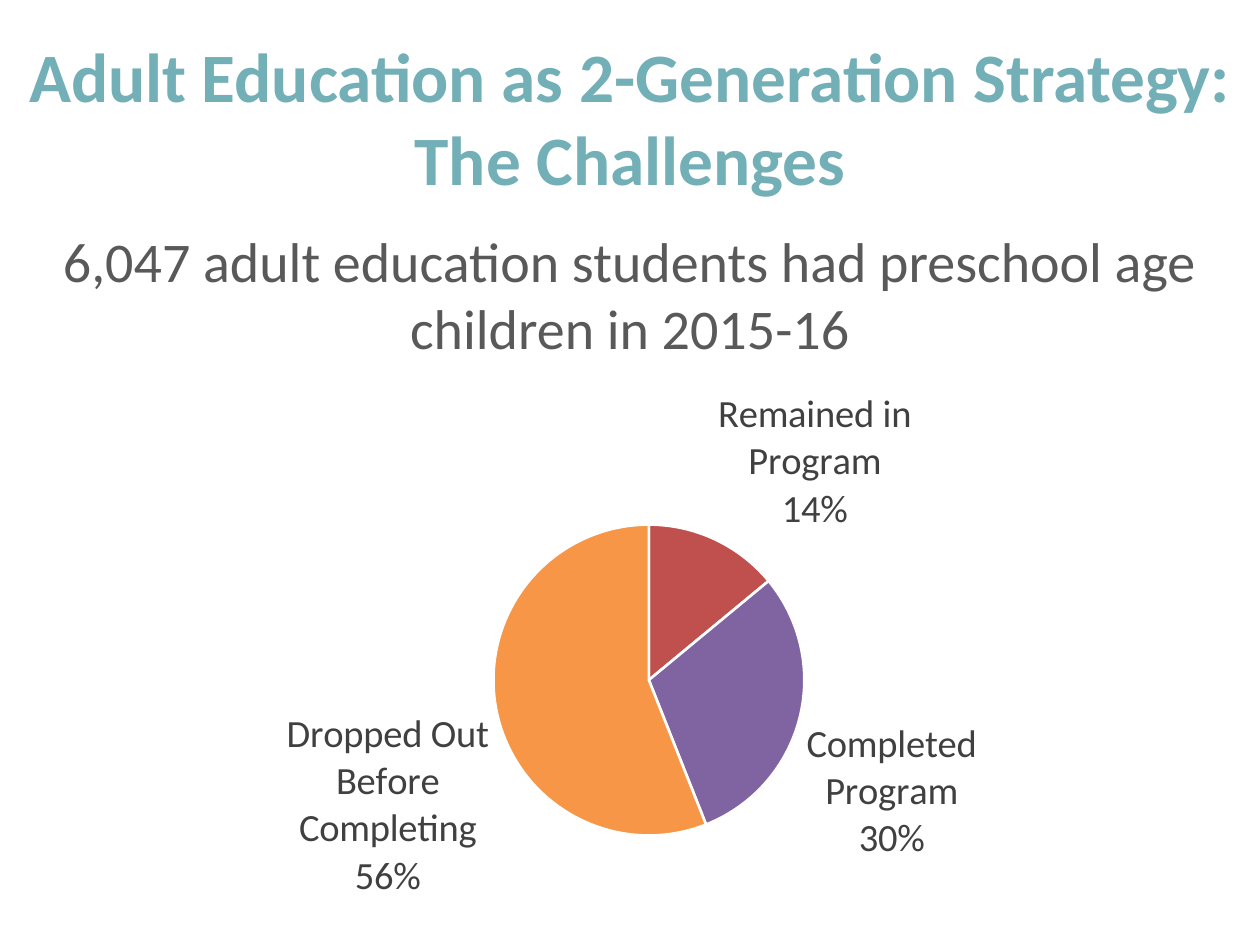
from lxml import etree
from pptx import Presentation
from pptx.chart.data import CategoryChartData
from pptx.dml.color import RGBColor
from pptx.enum.chart import XL_CHART_TYPE, XL_LABEL_POSITION
from pptx.enum.text import MSO_ANCHOR, PP_ALIGN
from pptx.oxml.ns import qn
from pptx.util import Inches, Pt

PIE = XL_CHART_TYPE.PIE
OUTSIDE_END = XL_LABEL_POSITION.OUTSIDE_END
MIDDLE, TOP = MSO_ANCHOR.MIDDLE, MSO_ANCHOR.TOP
CENTER = PP_ALIGN.CENTER

TEAL = RGBColor(0x73, 0xAF, 0xB6)
GRAY = RGBColor(0x59, 0x59, 0x59)
DARK = RGBColor(0x40, 0x40, 0x40)
WHITE = RGBColor(0xFF, 0xFF, 0xFF)
RED = RGBColor(0xC0, 0x50, 0x4D)
PURPLE = RGBColor(0x80, 0x64, 0xA2)
ORANGE = RGBColor(0xF7, 0x96, 0x46)

OUTCOMES = [
    ("Remained in Program", 14, RED),
    ("Completed Program", 30, PURPLE),
    ("Dropped Out Before Completing", 56, ORANGE),
]
PIE_LAYOUT = {"x": 0.39, "y": 0.27, "w": 0.25, "h": 0.54}


def format_font(font, size, color, bold=False):
    for name, value in {"name": "Calibri", "size": Pt(size), "bold": bold}.items():
        setattr(font, name, value)
    font.color.rgb = color


def write_text(sp, text, size, color, anchor, bold=False):
    tf = sp.text_frame
    tf.word_wrap = True
    tf.vertical_anchor = anchor
    p = tf.paragraphs[0]
    p.text = text
    p.alignment = CENTER
    for r in p.runs:
        format_font(r.font, size, color, bold)


def add_title(s, text):
    sp = s.shapes.title
    box = {"left": 0, "top": 0.3, "width": 10, "height": 1.25}
    for name, value in box.items():
        setattr(sp, name, Inches(value))
    write_text(sp, text, 39.6, TEAL, MIDDLE, True)


def add_subtitle(s, text):
    sp = s.shapes.add_textbox(Inches(0.25), Inches(1.75), Inches(9.5), Inches(1.18))
    write_text(sp, text, 32, GRAY, TOP)


def place_plot(chart):
    plot_area = chart.plots[0]._element.getparent()
    for old in plot_area.findall(qn("c:layout")):
        plot_area.remove(old)
    layout = etree.Element(qn("c:layout"))
    plot_area.insert(0, layout)
    manual = etree.SubElement(layout, qn("c:manualLayout"))
    settings = {"layoutTarget": "inner", "xMode": "edge", "yMode": "edge", **PIE_LAYOUT}
    for tag, value in settings.items():
        etree.SubElement(manual, qn(f"c:{tag}")).set("val", str(value))


def add_outcome_pie(s):
    data = CategoryChartData()
    data.categories = [name for name, _, _ in OUTCOMES]
    data.add_series("Series 1", [value for _, value, _ in OUTCOMES])
    frame = s.shapes.add_chart(
        PIE, Inches(0), Inches(2.93), Inches(10), Inches(4.57), data
    )
    chart = frame.chart
    chart.has_title = False
    chart.has_legend = False
    place_plot(chart)
    plot = chart.plots[0]
    plot.vary_by_categories = True
    for i, (_, _, color) in enumerate(OUTCOMES):
        fmt = plot.series[0].points[i].format
        fmt.fill.solid()
        fmt.fill.fore_color.rgb = color
        fmt.line.color.rgb = WHITE
        fmt.line.width = Pt(1.5)
    labels = plot.series[0].data_labels
    options = {
        "show_value": False,
        "show_category_name": True,
        "show_percentage": True,
        "number_format": "0%",
        "number_format_is_linked": False,
        "position": OUTSIDE_END,
    }
    for name, value in options.items():
        setattr(labels, name, value)
    format_font(labels.font, 22, DARK)


def main():
    prs = Presentation()
    prs.slide_width = Inches(10)
    prs.slide_height = Inches(7.5)
    s = prs.slides.add_slide(prs.slide_layouts[5])
    add_title(s, "Adult Education as 2-Generation Strategy:\nThe Challenges")
    add_subtitle(
        s, "6,047 adult education students had preschool age children in 2015-16"
    )
    add_outcome_pie(s)
    prs.save("out.pptx")


if __name__ == "__main__":
    main()
